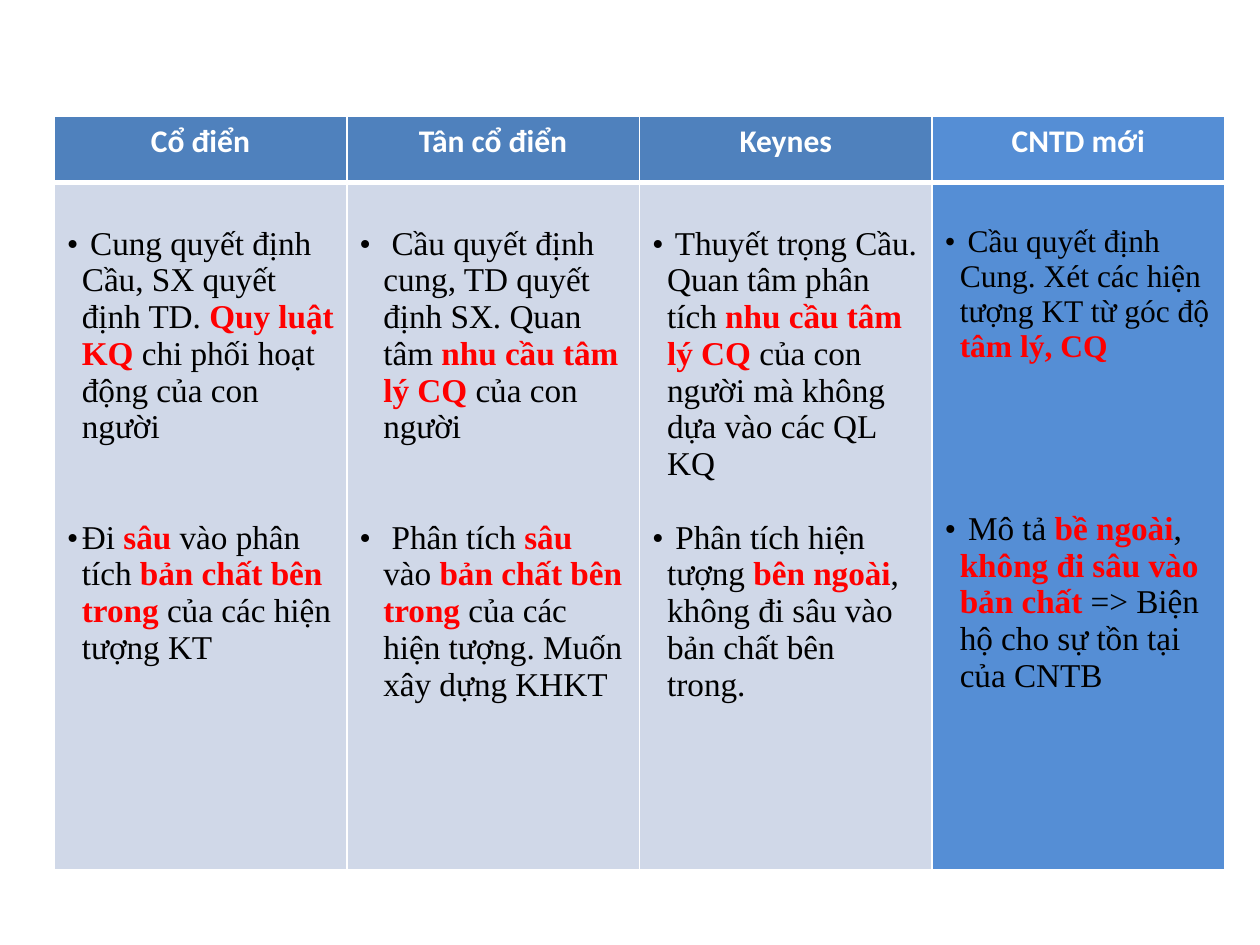
from lxml import etree
from pptx import Presentation
from pptx.dml.color import RGBColor
from pptx.enum import text
from pptx.oxml import ns
from pptx.util import Inches, Pt


def color(value):
    return RGBColor.from_string(value)


def style_cell(cell, fill, top, bottom):
    cell.fill.solid()
    cell.fill.fore_color.rgb = color(fill)
    properties = cell._tc.get_or_add_tcPr()
    for index, (side, width) in enumerate(zip("LRTB", (1, 1, top, bottom))):
        line = etree.Element(ns.qn(f"a:ln{side}"), w=str(Pt(width)))
        solid = etree.SubElement(line, ns.qn("a:solidFill"))
        etree.SubElement(solid, ns.qn("a:srgbClr"), val="FFFFFF")
        properties.insert(index, line)


BLUE, SKY, PALE = "4F81BD", "558ED5", "D0D8E8"

# Asterisks enclose the emphasised words.
columns = [
    ("Cổ điển", BLUE, PALE, 0.12, 0.34, 42, [
        (19, " Cung quyết định Cầu, SX quyết định TD. *Quy luật KQ* chi phối hoạt động của con người"),
        (19, "Đi *sâu* vào phân tích *bản chất bên trong *của các hiện tượng KT")]),
    ("Tân cổ điển", BLUE, PALE, 0.19, 0.34, 42, [
        (19, " Cầu quyết định cung, TD quyết định SX. Quan tâm *nhu cầu tâm lý CQ *của con người"),
        (19, " Phân tích *sâu* vào *bản chất bên trong *của các hiện tượng. Muốn xây dựng KHKT")]),
    ("Keynes", BLUE, PALE, 0.12, 0.34, 21, [
        (19, " Thuyết trọng Cầu. Quan tâm phân tích *nhu cầu tâm lý CQ* của con người mà không dựa vào các QL KQ"),
        (19, " Phân tích hiện tượng *bên ngoài*, không đi sâu vào bản chất bên trong.")]),
    ("CNTD mới", SKY, SKY, 0.12, 0.33, 84, [
        (18, " Cầu quyết định Cung. Xét các hiện tượng KT từ góc độ *tâm lý, CQ*"),
        (19, " Mô tả *bề ngoài*, *không đi sâu vào bản chất* => Biện hộ cho sự tồn tại của CNTB")]),
]

deck = Presentation()
deck.slide_width, deck.slide_height = Inches(10), Inches(7.5)
page = deck.slides.add_slide(deck.slide_layouts[6])
table = page.shapes.add_table(
    2, len(columns), Inches(0.43), Inches(0.92), Inches(9.29), Inches(5.98)).table
table.rows[0].height = Inches(0.53)
table.rows[1].height = Inches(5.45)

for number, (title, header_fill, body_fill, indent, top, gap, points) in enumerate(columns):
    header = table.cell(0, number)
    style_cell(header, header_fill, 1, 3)
    header.text_frame.text = title
    para = header.text_frame.paragraphs[0]
    para.alignment = text.PP_ALIGN.CENTER
    font = para.runs[0].font
    font.name, font.size, font.bold = "Calibri", Pt(18), True
    font.color.rgb = color("FFFFFF")

    body = table.cell(1, number)
    style_cell(body, body_fill, 3, 1)
    body.margin_top = Inches(top)
    for order, (size, wording) in enumerate(points):
        para = body.text_frame.add_paragraph() if order else body.text_frame.paragraphs[0]
        para.space_before = Pt(gap if order else 0)
        properties = para._p.get_or_add_pPr()
        properties.set("marL", str(Inches(indent)))
        properties.set("indent", str(-Inches(indent)))
        etree.SubElement(properties, ns.qn("a:buFont"), typeface="Times New Roman")
        etree.SubElement(properties, ns.qn("a:buChar"), char="•")
        for part, words in enumerate(wording.split("*")):
            if words:
                span = para.add_run()
                span.text = words
                span.font.name, span.font.size = "Times New Roman", Pt(size)
                span.font.bold = part % 2 == 1
                span.font.color.rgb = color("FF0000" if part % 2 else "000000")

deck.save("out.pptx")
